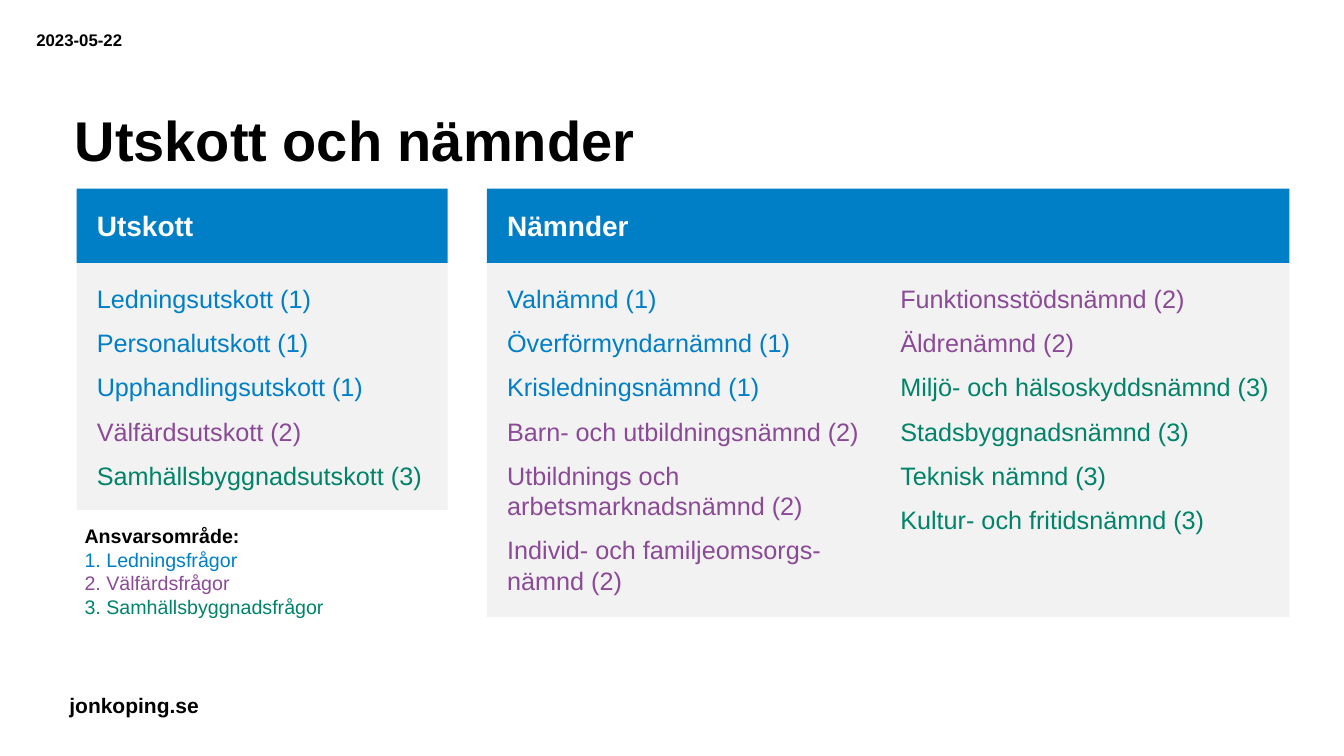
from dataclasses import dataclass
from typing import Optional

from pptx import Presentation
from pptx.dml.color import RGBColor
from pptx.enum.text import MSO_ANCHOR as Anchor, MSO_AUTO_SIZE as AutoSize, PP_ALIGN as Align
from pptx.oxml.ns import qn
from pptx.util import Inches, Pt

COLORS = {
    "black": "000000", "white": "FFFFFF", "blue": "007FC7",
    "purple": "8B4A96", "green": "008369", "grey": "F2F2F2",
}
AREAS = {1: "blue", 2: "purple", 3: "green"}
FONT = "Arial"
HEAD_TOP, HEAD_H, LIST_TOP, PAD = 1.87, 0.74, 2.61, 0.2


@dataclass
class Line:
    text: str
    color: str = "black"
    bold: bool = False


@dataclass
class Box:
    left: float
    top: float
    width: float
    height: float
    lines: list[Line]
    size: int
    holder: Optional[int] = None  # placeholder index; None gives a text box
    fill: Optional[str] = None
    insets: tuple[float, float] = (0, 0)  # horizontal, vertical
    anchor: Anchor = Anchor.TOP
    wrap: bool = True
    gap: int = 0
    spacing: float = 1.0


def rgb(name: str) -> RGBColor:
    return RGBColor.from_string(COLORS[name])


def set_all(target, values: dict) -> None:
    for name, value in values.items():
        setattr(target, name, value)


def bodies(*groups: tuple[int, list[str]]) -> list[Line]:
    """List committees with their area number, in the colour of that area."""
    return [Line(f"{name} ({area})", AREAS[area]) for area, names in groups for name in names]


def header(left: float, width: float, text: str, holder: int) -> Box:
    return Box(left, HEAD_TOP, width, HEAD_H, [Line(text, "white", True)], 20,
               holder, "blue", (PAD, 0), Anchor.MIDDLE)


def panel(left: float, width: float, height: float, lines: list[Line],
          holder: Optional[int] = None) -> Box:
    return Box(left, LIST_TOP, width, height, lines, 18, holder, "grey", (PAD, PAD), gap=10)


def draw(s, box: Box) -> None:
    area = [Inches(v) for v in (box.left, box.top, box.width, box.height)]
    if box.holder is None:
        sp = s.shapes.add_textbox(*area)
    else:
        sp = s.placeholders[box.holder]
        set_all(sp, dict(zip(("left", "top", "width", "height"), area)))
    if box.fill:
        sp.fill.solid()
        sp.fill.fore_color.rgb = rgb(box.fill)

    tf = sp.text_frame
    side, end = (Inches(v) for v in box.insets)
    set_all(tf, {
        "auto_size": AutoSize.NONE, "word_wrap": box.wrap, "vertical_anchor": box.anchor,
        "margin_left": side, "margin_right": side, "margin_top": end, "margin_bottom": end,
    })
    for i, line in enumerate(box.lines):
        p = tf.add_paragraph() if i else tf.paragraphs[0]
        pPr = p._p.get_or_add_pPr()
        pPr.set("marL", "0")
        pPr.set("indent", "0")
        pPr.append(pPr.makeelement(qn("a:buNone"), {}))
        set_all(p, {"alignment": Align.LEFT, "line_spacing": box.spacing,
                    "space_before": Pt(box.gap if i else 0), "space_after": Pt(0)})
        r = p.add_run()
        r.text = line.text
        set_all(r.font, {"name": FONT, "size": Pt(box.size), "bold": line.bold})
        r.font.color.rgb = rgb(line.color)


# Committees
COMMITTEES = bodies(
    (1, ["Ledningsutskott", "Personalutskott", "Upphandlingsutskott"]),
    (2, ["Välfärdsutskott"]),
    (3, ["Samhällsbyggnadsutskott"]),
)
# Boards, in two columns
BOARDS_LEFT = bodies(
    (1, ["Valnämnd", "Överförmyndarnämnd", "Krisledningsnämnd"]),
    (2, ["Barn- och utbildningsnämnd", "Utbildnings och arbetsmarknadsnämnd",
         "Individ- och familjeomsorgs-nämnd"]),
)
BOARDS_RIGHT = bodies(
    (2, ["Funktionsstödsnämnd", "Äldrenämnd"]),
    (3, ["Miljö- och hälsoskyddsnämnd", "Stadsbyggnadsnämnd", "Teknisk nämnd",
         "Kultur- och fritidsnämnd"]),
)
# Legend of areas
LEGEND = [Line("Ansvarsområde:", bold=True)] + [
    Line(f"{area}. {name}", AREAS[area])
    for area, name in enumerate(
        ["Ledningsfrågor", "Välfärdsfrågor", "Samhällsbyggnadsfrågor"], 1)
]

BOXES = [
    Box(0.59, 6.82, 1.5, 0.35, [Line("jonkoping.se", bold=True)], 15,
        insets=(0.1, 0.05), wrap=False),
    Box(0.74, 0.5, 11.84, 1.22, [Line("Utskott och nämnder", bold=True)], 40,
        holder=0, anchor=Anchor.BOTTOM, spacing=0.9),
    Box(0.36, 0.3, 0.98, 0.2, [Line("2023-05-22", bold=True)], 12),
    header(0.76, 3.68, "Utskott", 1),
    panel(0.76, 3.68, 2.45, COMMITTEES, 2),
    header(4.83, 7.96, "Nämnder", 3),
    panel(4.83, 3.9, 3.51, BOARDS_LEFT, 4),
    panel(8.73, 4.06, 3.51, BOARDS_RIGHT),
    Box(0.74, 5.15, 2.58, 1.04, LEGEND, 14, insets=(0.1, 0.05), wrap=False),
]


def main() -> None:
    prs = Presentation()
    set_all(prs, {"slide_width": Inches(13.33), "slide_height": Inches(7.5)})
    s = prs.slides.add_slide(prs.slide_layouts.get_by_name("Comparison"))
    for box in BOXES:
        draw(s, box)
    prs.save("out.pptx")


if __name__ == "__main__":
    main()
